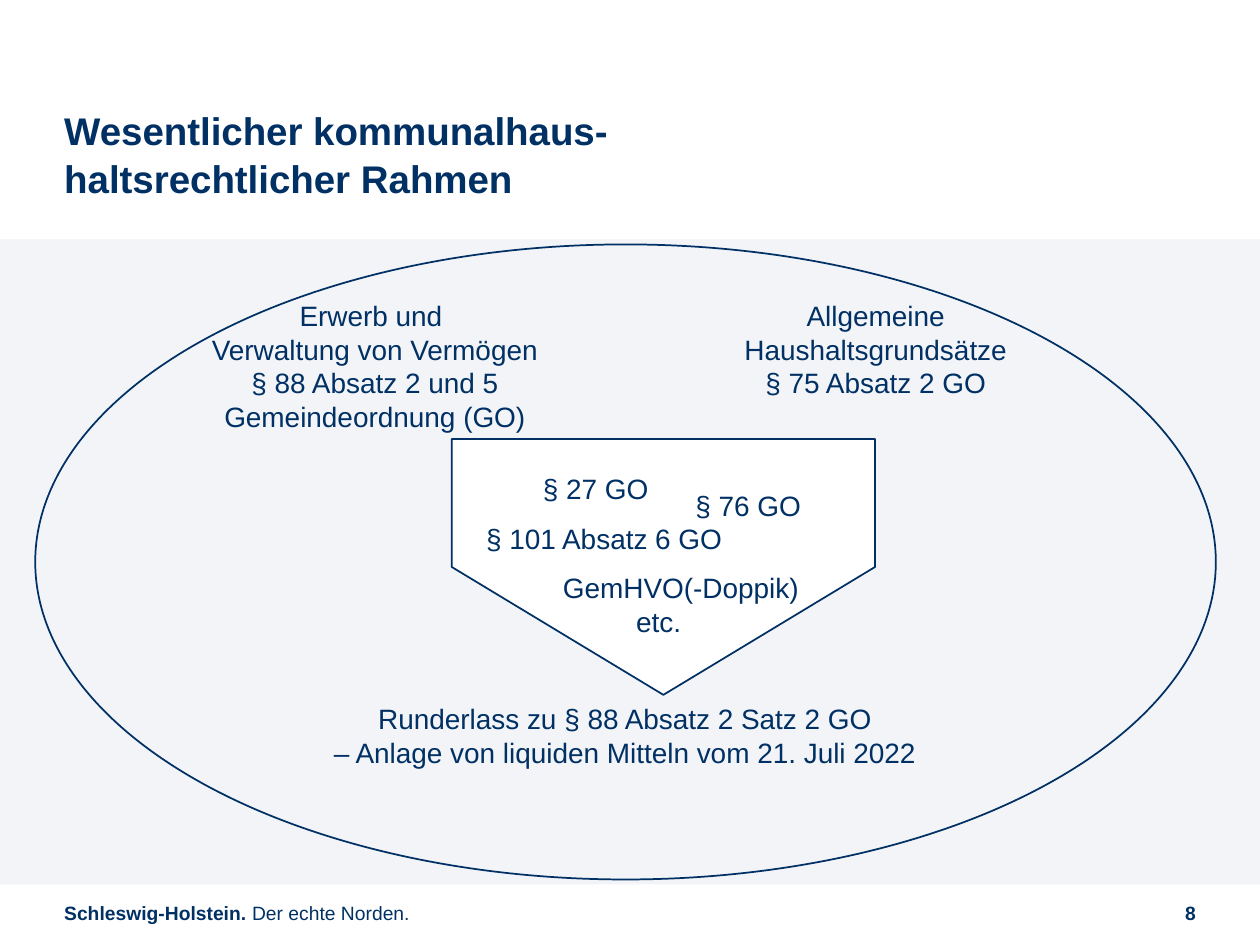
from pptx import Presentation
from pptx.dml.color import RGBColor
from pptx.enum import shapes, text
from pptx.util import Inches, Pt

NAVY = RGBColor(0x00, 0x30, 0x64)
PALE = RGBColor(0xF2, 0xF4, 0xF7)
WHITE = RGBColor(0xFF, 0xFF, 0xFF)
LEFT, CENTER, RIGHT = text.PP_ALIGN.LEFT, text.PP_ALIGN.CENTER, text.PP_ALIGN.RIGHT
SHAPE = shapes.MSO_SHAPE

TITLE = "Wesentlicher kommunalhaus-haltsrechtlicher Rahmen"
# Each box: left, top, width, height, paragraphs
TOPICS = [
    (5.65, 2.32, 2.6, 0.91, ["Allgemeine Haushaltsgrundsätze", "§ 75 Absatz 2 GO"]),
    (1.54, 2.32, 2.87, 1.18, ["Erwerb und ", "Verwaltung von Vermögen",
                              "§ 88 Absatz 2 und 5 Gemeindeordnung (GO)"]),
    (1.3, 5.52, 7.32, 0.64, ["Runderlass zu § 88 Absatz 2 Satz 2 GO\v"
                             "– Anlage von liquiden Mitteln vom 21. Juli 2022"]),
]
RULES = [
    (3.76, 4.09, 2.2, 0.37, ["§ 101 Absatz 6 GO"]),
    (4.21, 3.69, 1.05, 0.37, ["§ 27 GO"]),
    (5.42, 3.83, 1.05, 0.37, ["§ 76 GO"]),
    (4.95, 4.75, 1.62, 0.37, ["etc."]),
    (4.37, 4.48, 2.2, 0.37, ["GemHVO(-Doppik)"]),
]
# Each footer: left, width, alignment, runs with their weight
FOOTERS = [
    (0.51, 3.23, LEFT, [("Schleswig-Holstein.", True), (" Der echte Norden.", False)]),
    (8.7, 0.79, RIGHT, [("8", True)]),
]


def style(font, size, bold=False):
    for name, value in {"name": "Arial", "size": Pt(size), "bold": bold}.items():
        setattr(font, name, value)
    font.color.rgb = NAVY


def clear_margins(tf):
    for side in ("left", "top", "right", "bottom"):
        setattr(tf, f"margin_{side}", 0)


def add_figure(s, kind, box, fill=None, outlined=True):
    sp = s.shapes.add_shape(kind, *map(Inches, box))
    sp.shadow.inherit = False
    if fill is None:
        sp.fill.background()
    else:
        sp.fill.solid()
        sp.fill.fore_color.rgb = fill
    if outlined:
        sp.line.color.rgb = NAVY
        sp.line.width = Pt(1)
    else:
        sp.line.fill.background()
    return sp


def add_label(s, box, paragraphs, align):
    tf = s.shapes.add_textbox(*map(Inches, box)).text_frame
    tf.word_wrap = True
    tf.text = "\n".join(paragraphs)
    for p in tf.paragraphs:
        p.alignment = align
        for r in p.runs:
            style(r.font, 16)


def add_footer(s, left, width, align, runs):
    tf = s.shapes.add_textbox(*map(Inches, (left, 7.1, width, 0.29))).text_frame
    clear_margins(tf)
    tf.word_wrap = True
    tf.vertical_anchor = text.MSO_ANCHOR.MIDDLE
    p = tf.paragraphs[0]
    p.alignment = align
    for words, bold in runs:
        r = p.add_run()
        r.text = words
        style(r.font, 11, bold)


def add_title(s):
    sp = s.shapes.title
    sp.left, sp.top, sp.width, sp.height = map(Inches, (0.51, 0.6, 6.54, 1))
    tf = sp.text_frame
    clear_margins(tf)
    tf.word_wrap = True
    tf.auto_size = text.MSO_AUTO_SIZE.NONE
    tf.vertical_anchor = text.MSO_ANCHOR.BOTTOM
    tf.text = TITLE
    p = tf.paragraphs[0]
    p.alignment = LEFT
    p.line_spacing = 1.05
    style(p.runs[0].font, 22, True)


def main():
    prs = Presentation()
    prs.slide_width, prs.slide_height = Inches(10), Inches(7.5)
    s = prs.slides.add_slide(prs.slide_layouts[5])

    add_figure(s, SHAPE.RECTANGLE, (0, 1.9, 10, 5.12), PALE, outlined=False)
    for footer in FOOTERS:
        add_footer(s, *footer)
    add_title(s)
    for *box, paragraphs in TOPICS:
        add_label(s, box, paragraphs, CENTER)
    add_figure(s, SHAPE.OVAL, (0.28, 1.94, 9.37, 5.04))
    funnel = add_figure(s, SHAPE.PENTAGON, (4.25, 2.82, 2.03, 3.36), WHITE)
    funnel.rotation = 90
    funnel.adjustments[0] = 0.5
    for *box, paragraphs in RULES:
        add_label(s, box, paragraphs, LEFT)

    prs.save("out.pptx")


if __name__ == "__main__":
    main()
